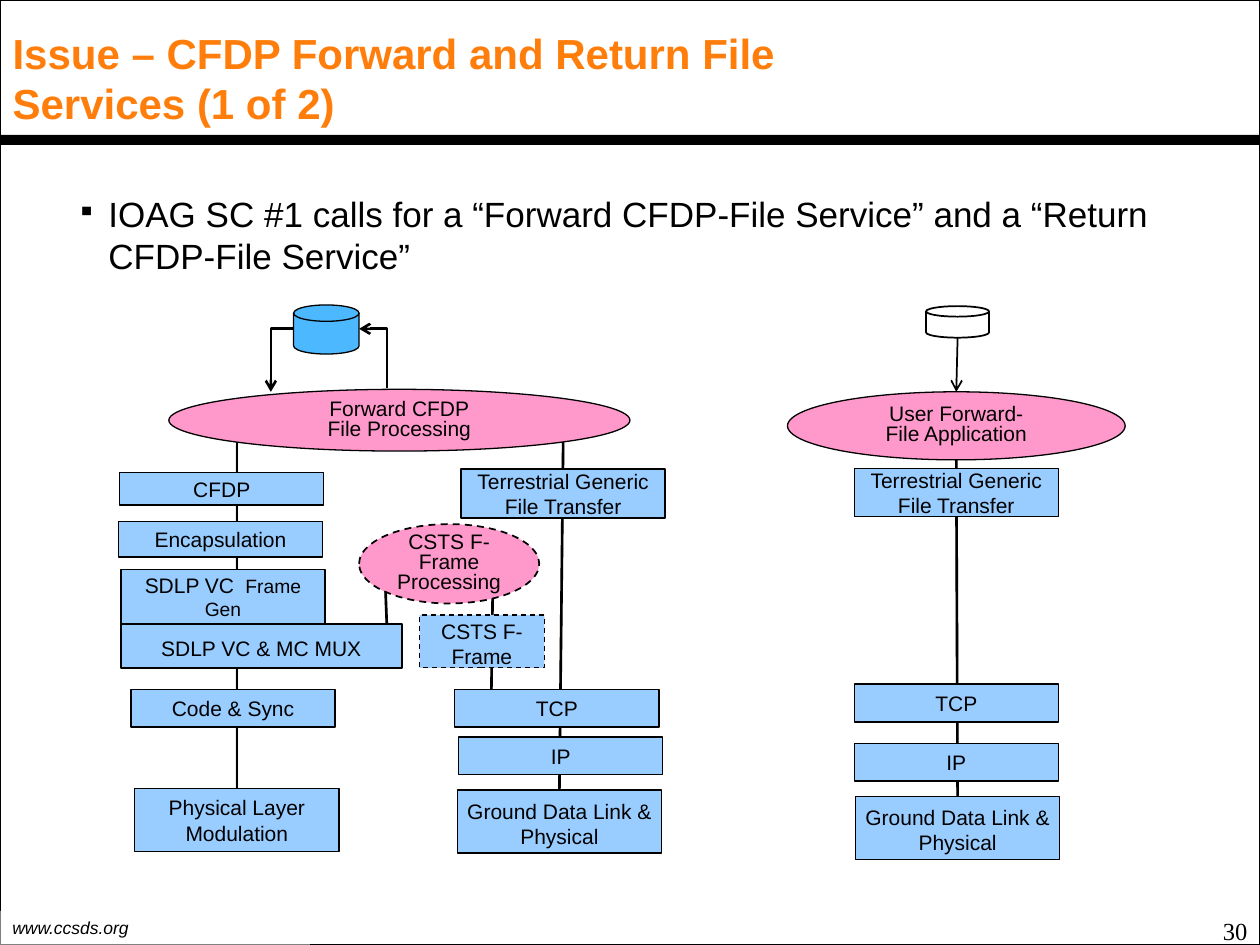
from dataclasses import dataclass
from typing import Optional

from lxml import etree
from pptx import Presentation
from pptx.dml.color import RGBColor
from pptx.enum.dml import MSO_LINE
from pptx.enum.shapes import MSO_CONNECTOR, MSO_SHAPE
from pptx.enum.text import MSO_ANCHOR, MSO_AUTO_SIZE, PP_ALIGN
from pptx.oxml.ns import qn
from pptx.util import Inches, Pt

RECT, OVAL, DISK = MSO_SHAPE.RECTANGLE, MSO_SHAPE.OVAL, MSO_SHAPE.FLOWCHART_MAGNETIC_DISK
STRAIGHT, ELBOW = MSO_CONNECTOR.STRAIGHT, MSO_CONNECTOR.ELBOW
DASH = MSO_LINE.DASH
TOP, MIDDLE = MSO_ANCHOR.TOP, MSO_ANCHOR.MIDDLE
LEFT, CENTER, RIGHT = PP_ALIGN.LEFT, PP_ALIGN.CENTER, PP_ALIGN.RIGHT

COLORS = {"ink": "000000", "paper": "FFFFFF", "title": "FF7D0A", "layer": "99CCFF",
          "process": "FF99CC", "store": "4CB8FF", "shade": "808080"}
WIDE, HIGH = Inches(10), Inches(7.5)
COLS = 100  # square grid: 100 columns by 75 rows
UNIT = WIDE / COLS
PAD = (0.04, 0.03, 0.04, 0.03)
FLAT = (0.04, 0.03, 0.04, 0)  # no bottom inset


@dataclass
class Node:
    """A layer, process or file store, placed in grid cells."""
    col: float
    row: float
    high: float
    text: str = ""
    wide: float = 16.2
    kind: int = RECT
    fill: str = "layer"
    pen: float = 0.75
    dash: bool = False
    pad: tuple = PAD
    small: str = ""  # closing words in smaller type


@dataclass
class Link:
    """A line between two grid points."""
    start: tuple
    end: tuple
    pen: float = 1.5
    kind: int = STRAIGHT
    arrow: Optional[str] = None  # headEnd or tailEnd
    shade: bool = True


def cell(n: float) -> int:
    return round(n * UNIT)


def color(name: str) -> RGBColor:
    return RGBColor.from_string(COLORS[name])


def style(para, size: float, tint: str = "ink", face: str = "Arial", align=LEFT) -> None:
    para.alignment = align
    para.font.size, para.font.name = Pt(size), face
    para.font.color.rgb = color(tint)


def frame(shape, pad: tuple, anchor):
    """Set up wrapping, insets and anchor of a shape's text."""
    tf = shape.text_frame
    tf.word_wrap, tf.auto_size, tf.vertical_anchor = True, MSO_AUTO_SIZE.NONE, anchor
    tf.margin_left, tf.margin_top, tf.margin_right, tf.margin_bottom = map(Inches, pad)
    return tf


def add_shape(slide, kind: int, box: tuple, fill: Optional[str], pen: float = 0):
    shape = slide.shapes.add_shape(kind, *map(cell, box))
    shape.shadow.inherit = False
    if fill:
        shape.fill.solid()
        shape.fill.fore_color.rgb = color(fill)
    else:
        shape.fill.background()
    if pen:
        shape.line.width = Pt(pen)
        shape.line.color.rgb = color("ink")
    else:
        shape.line.fill.background()
    return shape


def draw_node(slide, node: Node) -> None:
    shape = add_shape(slide, node.kind, (node.col, node.row, node.wide, node.high),
                      node.fill, node.pen)
    if node.dash:
        shape.line.dash_style = DASH
    if not node.text:
        return
    oval = node.kind == OVAL
    tf = frame(shape, (0, 0, 0, 0) if oval else node.pad, MIDDLE)
    tf.text = node.text
    for para in tf.paragraphs:
        style(para, 12, align=CENTER)
        if oval:
            para.line_spacing = 0.8
    if node.small:
        run = tf.paragraphs[0].add_run()
        run.text, run.font.size = node.small, Pt(11)


def draw_link(slide, link: Link) -> None:
    line = slide.shapes.add_connector(link.kind, *map(cell, link.start + link.end))
    line.line.width = Pt(link.pen)
    line.line.color.rgb = color("ink")
    props = line._element.spPr
    if link.kind == ELBOW:  # a single bend
        props.find(qn("a:prstGeom")).set("prst", "bentConnector2")
    if link.arrow:
        etree.SubElement(props.find(qn("a:ln")), qn("a:" + link.arrow), type="arrow")
    effects = etree.SubElement(props, qn("a:effectLst"))
    if link.shade:
        shadow = etree.SubElement(effects, qn("a:outerShdw"), blurRad="0",
                                  dist=str(Pt(1.6)), dir="5400000", rotWithShape="0")
        tone = etree.SubElement(shadow, qn("a:srgbClr"), val=COLORS["shade"])
        etree.SubElement(tone, qn("a:alpha"), val="38000")


def draw_page(slide) -> None:
    # Border, footer and title rule
    add_shape(slide, RECT, (0, 0, COLS, 75), None, 1)
    foot = add_shape(slide, RECT, (0, 72.3, 24.6, 2.7), "paper")
    tone = foot._element.spPr.find(qn("a:solidFill"))[0]
    etree.SubElement(tone, qn("a:alpha"), val="50000")
    tf = frame(foot, (0.1, 0.05, 0.1, 0.05), MIDDLE)
    tf.text = "www.ccsds.org"
    style(tf.paragraphs[0], 10)
    tf.paragraphs[0].font.italic = True
    add_shape(slide, RECT, (0, 10.7, COLS, 0.8), "ink")

    # Title
    title = slide.shapes.title
    title.left, title.top, title.width, title.height = map(cell, (0, 2.8, 68.1, 6.7))
    tf = frame(title, (0.1, 0.05, 0.1, 0.05), MIDDLE)
    tf.text = "Issue – CFDP Forward and Return File Services (1 of 2)"
    style(tf.paragraphs[0], 24, "title")
    tf.paragraphs[0].font.bold = True

    # Bullet
    body = slide.shapes.add_textbox(*map(cell, (2, 12.2, 92.5, 11.4)))
    tf = frame(body, (0.41, 0.31, 0.1, 0.05), TOP)
    tf.text = ("IOAG SC #1 calls for a “Forward CFDP-File Service” "
               "and a “Return CFDP-File Service”")
    para = tf.paragraphs[0]
    props = para._p.get_or_add_pPr()
    props.set("marL", str(Inches(0.25)))
    props.set("indent", str(-Inches(0.25)))
    etree.SubElement(props, qn("a:buSzPct"), val="75000")
    etree.SubElement(props, qn("a:buChar"), char="▪")
    style(para, 20)

    # Page number
    page = slide.shapes.add_textbox(*map(cell, (76.7, 72.2, 23.3, 4.7)))
    tf = frame(page, (0.1, 0.05, 0.1, 0.05), TOP)
    tf.text = "30"
    style(tf.paragraphs[0], 14, face="Times New Roman", align=RIGHT)


LINKS = [
    Link((39.1, 47.3), (39, 54.7)),
    Link((18.8, 35.1), (18.8, 62.6)),
    Link((44.7, 35.1), (44.4, 62.7)),
    Link((75.9, 36.5), (76, 63.2)),
    Link((30.6, 46.9), (30.7, 49.5)),
    Link((28.5, 26.1), (30.7, 30.8), kind=ELBOW, arrow="headEnd", shade=False),
    Link((23.3, 26.1), (21.5, 31.1), kind=ELBOW, arrow="tailEnd", shade=False),
    Link((75.9, 31.1), (76, 26.8), pen=1, arrow="headEnd", shade=False),
]
TRANSFER, GROUND = "Terrestrial Generic File Transfer", "Ground Data Link & Physical"
NODES = [
    # File stores and processes
    Node(23.3, 24.2, 3.9, wide=5.2, kind=DISK, fill="store"),
    Node(73.5, 24.3, 2.5, wide=5, kind=DISK, fill="paper", pen=1),
    Node(13.4, 30.9, 4.9, "Forward CFDP\nFile Processing", 36.6, OVAL, "process"),
    Node(62.5, 31.1, 5.4, "User Forward-\nFile Application", 26.8, OVAL, "process"),
    Node(28.5, 41.6, 6.3, "CSTS F-Frame Processing", 14.3, OVAL, "process", 1, True),
    # Space link stack
    Node(9.5, 37.5, 2.6, "CFDP"),
    Node(9.4, 41.4, 2.8, "Encapsulation"),
    Node(9.6, 45.2, 4.3, "SDLP VC ", small=" Frame Gen"),
    Node(9.6, 49.5, 3.5, "SDLP VC & MC MUX", 22.3, pen=1, pad=FLAT),
    Node(10.4, 54.7, 3, "Code & Sync"),
    Node(10.7, 62.6, 5, "Physical Layer Modulation"),
    # Terrestrial stack of the provider
    Node(36.6, 37.2, 3.9, TRANSFER, pen=1),
    Node(33.3, 48.8, 4.2, "CSTS F-Frame", 9.9, dash=True, pad=FLAT),
    Node(36.1, 54.7, 3, "TCP"),
    Node(36.4, 58.5, 3, "IP"),
    Node(36.3, 62.7, 5, GROUND, pad=FLAT),
    # Terrestrial stack of the user
    Node(67.8, 37.2, 3.8, TRANSFER),
    Node(67.8, 54.3, 3, "TCP"),
    Node(67.8, 59, 3, "IP"),
    Node(67.9, 63.2, 5, GROUND, pad=FLAT),
]


def main() -> None:
    deck = Presentation()
    deck.slide_width, deck.slide_height = WIDE, HIGH
    slide = deck.slides.add_slide(deck.slide_layouts[5])
    draw_page(slide)
    for link in LINKS:
        draw_link(slide, link)
    for node in NODES:
        draw_node(slide, node)
    deck.save("out.pptx")


if __name__ == "__main__":
    main()
